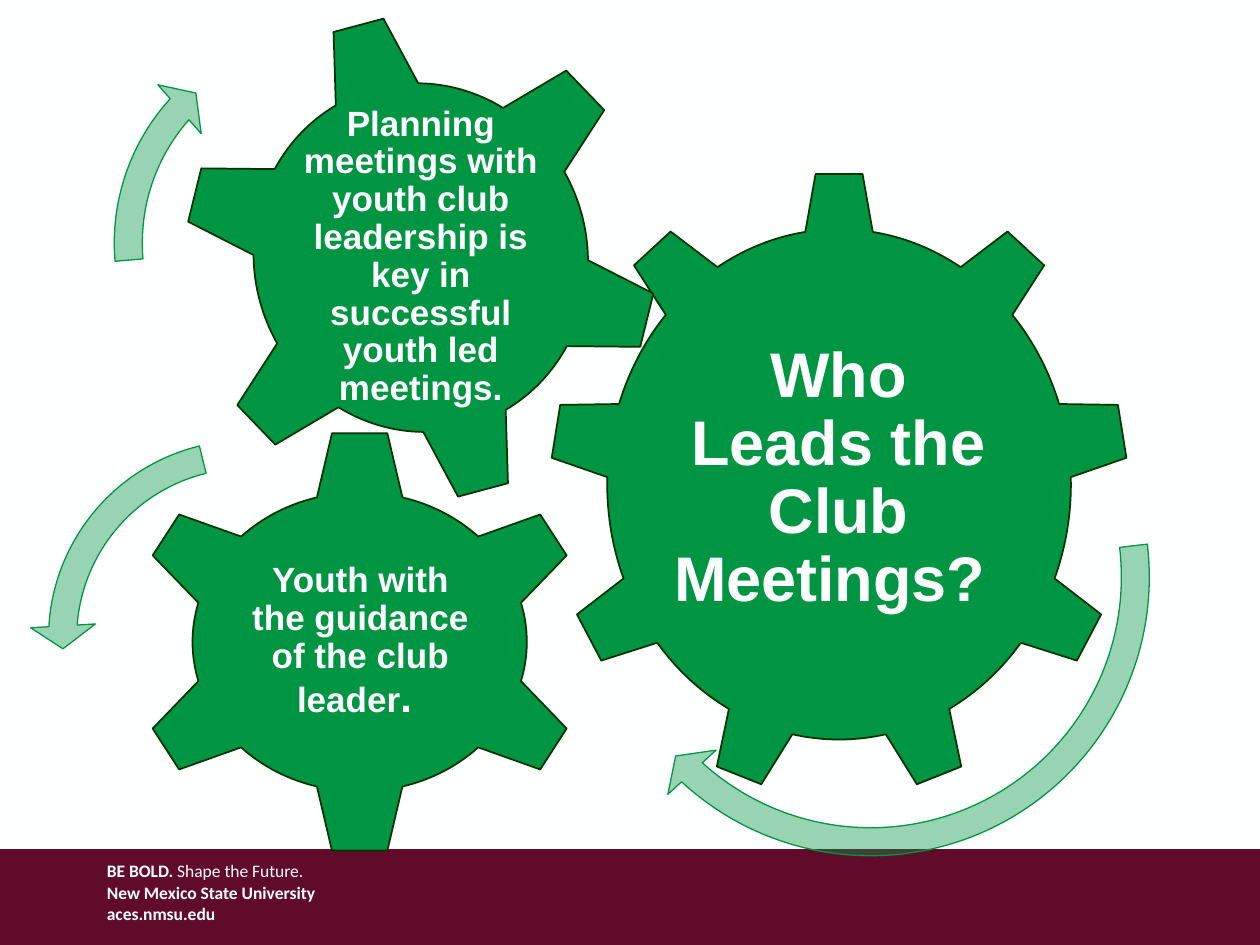
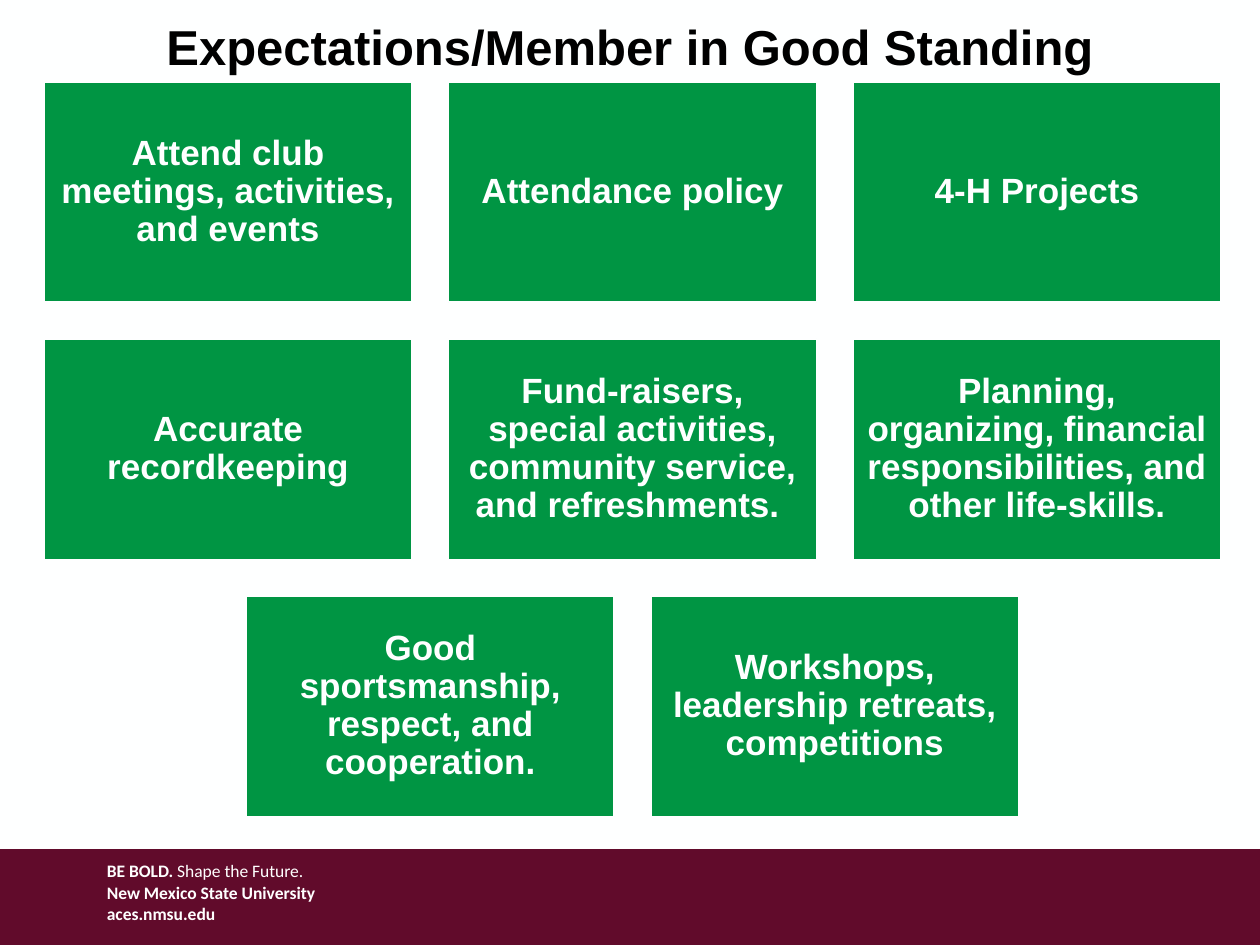
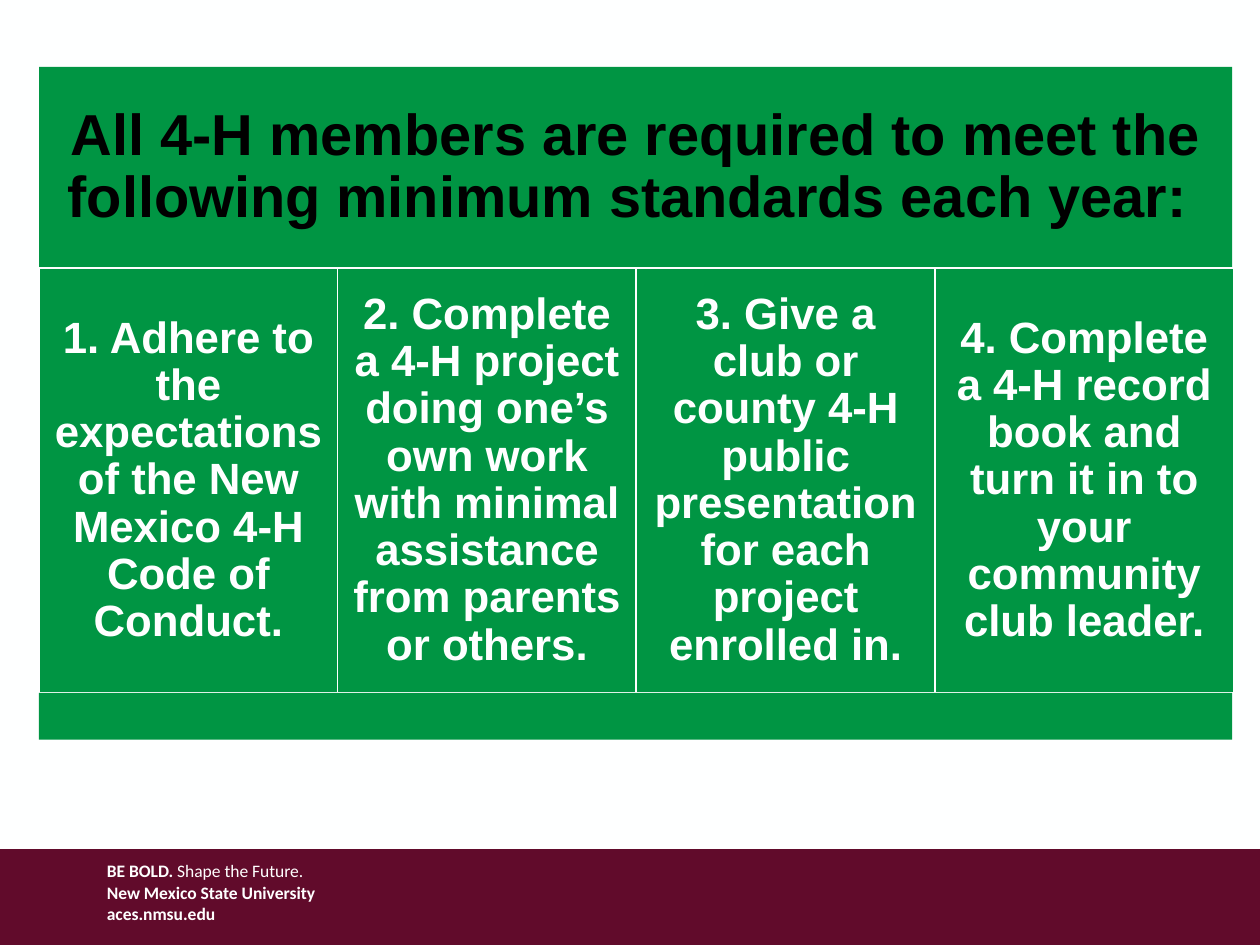
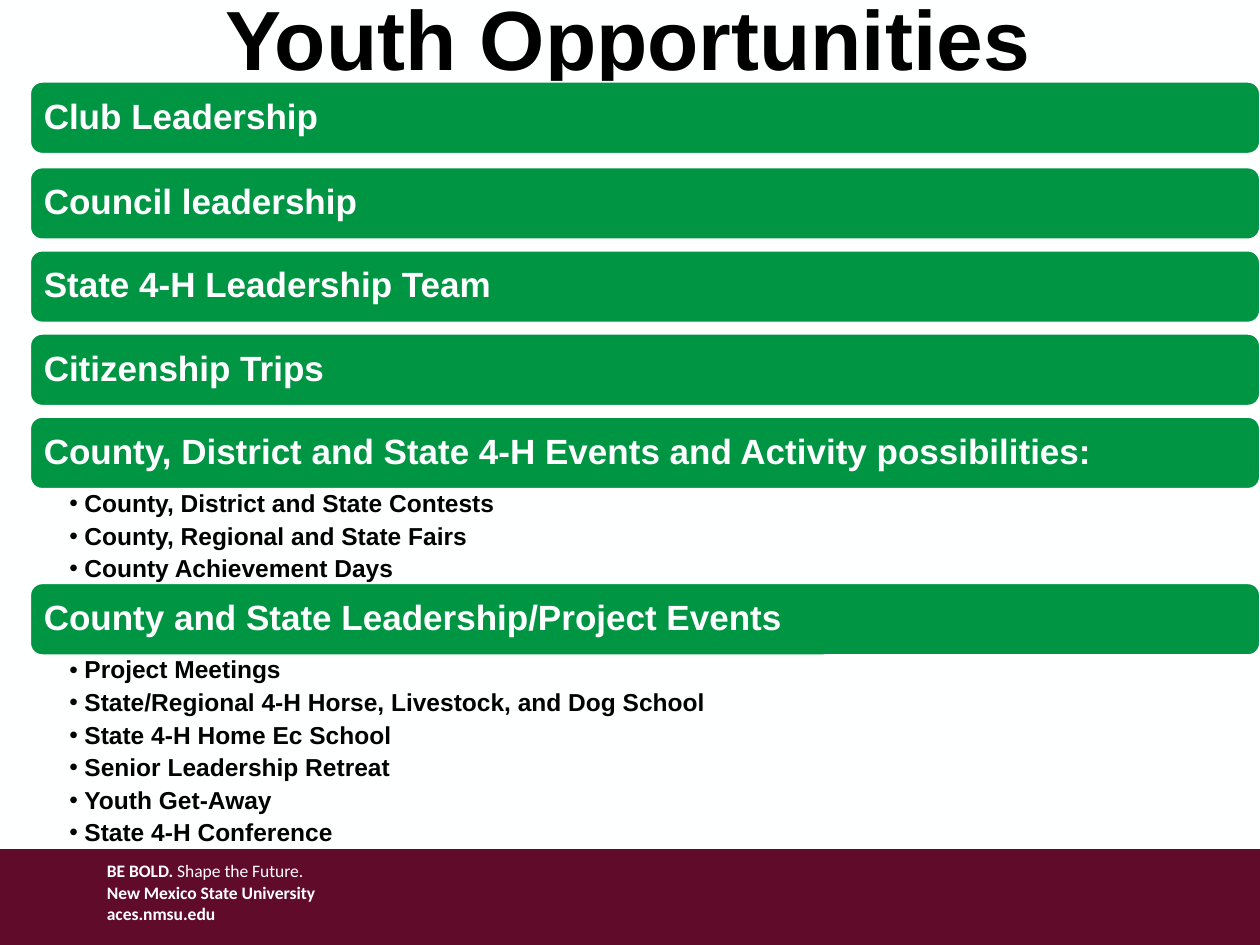
"""Build a four-slide deck on youth club leadership, expectations and opportunities."""
from dataclasses import dataclass

from lxml import etree
from pptx import Presentation
from pptx.dml.color import RGBColor
from pptx.enum.shapes import MSO_SHAPE as Shape
from pptx.enum.text import MSO_ANCHOR as Anchor, MSO_AUTO_SIZE as AutoSize, PP_ALIGN as Align
from pptx.oxml import parse_xml
from pptx.oxml.ns import nsdecls, qn
from pptx.util import Inches, Pt


@dataclass(frozen=True)
class Theme:
    green: RGBColor = RGBColor.from_string("009543")
    dark_green: RGBColor = RGBColor.from_string("003300")
    maroon: RGBColor = RGBColor.from_string("610B2B")
    paper: RGBColor = RGBColor.from_string("FEFFFF")
    white: RGBColor = RGBColor.from_string("FFFFFF")
    black: RGBColor = RGBColor.from_string("000000")
    font: str = "Arial"
    footer_font: str = "Calibri"
    banner: int = 48
    hub: int = 36
    heading: int = 33
    title: int = 28
    column: int = 25
    stop: int = 24
    label: int = 20
    bullet: int = 14
    footer: int = 10


theme = Theme()


def draw(page, kind, at, fill=theme.green, line=None, weight=1):
    """Add a flat preset shape."""
    shape = page.shapes.add_shape(kind, *map(Inches, at))
    shape.shadow.inherit = False
    shape.fill.solid()
    shape.fill.fore_color.rgb = fill
    if line is None:
        shape.line.fill.background()
    else:
        shape.line.color.rgb = line
        shape.line.width = Pt(weight)
    return shape


def write(box, parts, size, color=theme.paper, at=None, inset=0.08, align=Align.CENTER,
          anchor=Anchor.MIDDLE, outlined=True):
    """Fill a box with one bold paragraph made of (text, size) parts or a plain string."""
    if at:
        box.left, box.top, box.width, box.height = map(Inches, at)
    frame = box.text_frame
    frame.word_wrap = True
    frame.auto_size = AutoSize.NONE
    frame.vertical_anchor = anchor
    frame.margin_left = frame.margin_right = Inches(inset)
    frame.margin_top = frame.margin_bottom = Inches(inset)
    para = frame.paragraphs[0]
    para.alignment = align
    if outlined:
        para.line_spacing = 0.9
        para.space_after = Pt(size * 0.35)
    for text, points in [(parts, size)] if isinstance(parts, str) else parts:
        span = para.add_run()
        span.text = text
        span.font.name, span.font.size, span.font.bold = theme.font, Pt(points), True
        span.font.color.rgb = color
        if outlined:
            span.font._element.insert(0, parse_xml(
                f'<a:ln {nsdecls("a")} w="9525"><a:solidFill>'
                f'<a:srgbClr val="{theme.dark_green}"/></a:solidFill></a:ln>'))


deck = Presentation()
deck.slide_width, deck.slide_height = Inches(10), Inches(7.5)
master = deck.slide_master
master.background.fill.solid()
master.background.fill.fore_color.rgb = theme.paper
title_only, two_content = deck.slide_layouts[5], deck.slide_layouts[3]

page = deck.slides.add_slide(title_only)
band = draw(page, Shape.RECTANGLE, (0, 6.74, 10, 0.76), theme.maroon)
footer = page.shapes.add_textbox(*map(Inches, (0.75, 6.78, 2.88, 0.82)))
footer.text_frame.word_wrap = True
footer_lines = [
    [("BE BOLD. ", True), ("Shape the Future.", False)],
    [("New Mexico State University", True)],
    [("aces.nmsu.edu", True)],
]
for index, line in enumerate(footer_lines):
    para = footer.text_frame.add_paragraph() if index else footer.text_frame.paragraphs[0]
    for text, bold in line:
        span = para.add_run()
        span.text = text
        span.font.name, span.font.size, span.font.bold = theme.footer_font, Pt(theme.footer), bold
        span.font.color.rgb = theme.white
corner = draw(page, Shape.RECTANGLE, (0.13, 6.74, 0.7, 0.76), theme.maroon)
first_placeholder = master.shapes[0].element
for number, shared in enumerate((band, footer, corner), 20):
    shared.element.nvSpPr.cNvPr.set("id", str(number))
    first_placeholder.addprevious(shared.element)

gears = [
    (Shape.GEAR_9, (4.36, 1.36, 4.6, 4.97), 0, (5.28, 2.5, 2.75, 2.6), 0.05, theme.hub,
     "Who Leads the Club Meetings? "),
    (Shape.GEAR_6, (1.02, 3.4, 3.67, 3.39), 0, (1.92, 4.26, 1.88, 1.67), 0.03, theme.label,
     [("Youth with the guidance of the club leader", theme.label), (". ", theme.stop)]),
    (Shape.GEAR_6, (1.45, 0.09, 3.78, 3.91), 345, (2.27, 0.95, 2.14, 2.18), 0.03, theme.label,
     "Planning meetings with youth club leadership is key in successful youth led meetings."),
]
for kind, at, turn, text_at, inset, size, text in gears:
    gear = draw(page, kind, at, line=theme.dark_green)
    gear.rotation = turn
    is_hub = kind == Shape.GEAR_9
    box = page.shapes.title if is_hub else page.shapes.add_textbox(0, 0, 0, 0)
    write(box, text, size, at=text_at, inset=inset)
    gear.element.addnext(box.element)

arrows = [
    (Shape.CIRCULAR_ARROW, (4.55, 2.22, 4.72, 4.72), 90, (0.047, 2.99, 25.489, 157.925, 0.055)),
    (Shape.LEFT_CIRCULAR_ARROW, (0.24, 3.35, 3.43, 3.43), 9, (0.065, 4.3, 104.891, 148.378, 0.075)),
    (Shape.CIRCULAR_ARROW, (0.76, 0.08, 3.7, 3.7), 0, (0.06, 3.941, 133.138, 105.082, 0.07)),
]
for kind, at, turn, bends in arrows:
    arrow = draw(page, kind, at, line=theme.green, weight=0.75)
    arrow.rotation = turn
    for index, bend in enumerate(bends):
        arrow.adjustments[index] = bend
    fill_color = arrow.element.spPr.find(qn("a:solidFill"))[0]
    etree.SubElement(fill_color, qn("a:alpha")).set("val", "40000")

page = deck.slides.add_slide(title_only)
write(page.shapes.title, "Expectations/Member in Good Standing", theme.title, theme.black,
      at=(0, 0.08, 10, 0.57), inset=0.05, anchor=Anchor.TOP, outlined=False)
expectations = [
    ["Attend club meetings, activities, and events", "Attendance policy", "4-H Projects"],
    ["Accurate recordkeeping",
     "Fund-raisers, special activities, community service, and refreshments. ",
     "Planning, organizing, financial responsibilities, and other life-skills."],
    ["Good sportsmanship, respect, and cooperation.",
     "Workshops, leadership retreats, competitions"],
]
tile_width, tile_height, gap = 2.92, 1.75, 0.29
for row, texts in enumerate(expectations):
    indent = (3 - len(texts)) * (tile_width + gap) / 2
    for column, text in enumerate(texts):
        left = 0.35 + indent + column * (tile_width + gap)
        top = 0.65 + row * (tile_height + gap)
        tile = draw(page, Shape.RECTANGLE, (left, top, tile_width, tile_height), line=theme.paper)
        write(tile, text, theme.label)

page = deck.slides.add_slide(title_only)
heading = page.shapes.title
heading.fill.solid()
heading.fill.fore_color.rgb = theme.green
write(heading, "All 4-H members are required to meet the following minimum standards each year: ",
      theme.heading, theme.black, at=(0.31, 0.53, 9.47, 1.6), inset=0.14)
standards = [
    "1. Adhere to the expectations of the New Mexico 4-H Code of Conduct.",
    "2. Complete a 4-H project doing one’s own work with minimal assistance from parents or others.",
    "3. Give a club or county 4-H public presentation for each project enrolled in.",
    "4. Complete a 4-H record book and turn it in to your community club leader.",
]
column_width = 2.37
for index, text in enumerate(standards):
    column_at = (0.31 + index * column_width, 2.13, column_width, 3.37)
    write(draw(page, Shape.RECTANGLE, column_at, line=theme.paper), text, theme.column, inset=0.1)
draw(page, Shape.RECTANGLE, (0.31, 5.5, 9.47, 0.37))

page = deck.slides.add_slide(two_content)
write(page.shapes.title, "Youth Opportunities", theme.banner, theme.black,
      at=(-0.03, -0.16, 10.03, 0.91), inset=0.05, anchor=Anchor.TOP, outlined=False)
opportunities = [
    (0.65, "Club Leadership"),
    (1.33, "Council leadership"),
    (1.99, "State 4-H Leadership Team"),
    (2.65, "Citizenship Trips"),
    (3.31, "County, District and State 4-H Events and Activity possibilities:"),
    (4.63, "County and State Leadership/Project Events"),
]
for top, text in opportunities:
    bar = draw(page, Shape.ROUNDED_RECTANGLE, (0.24, top, 9.76, 0.57), line=theme.paper)
    write(bar, text, theme.label, align=Align.LEFT)

event_lists = [
    (3.88, 0.74, ["County, District and State Contests", "County, Regional and State Fairs",
                  "County Achievement Days"]),
    (5.2, 1.49, ["Project Meetings", "State/Regional 4-H Horse, Livestock, and Dog School",
                 "State 4-H Home Ec School", "Senior Leadership Retreat", "Youth Get-Away",
                 "State 4-H Conference"]),
]
for slot, (top, height, events) in enumerate(event_lists, 1):
    body = page.placeholders[slot]
    body.left, body.top, body.width, body.height = map(Inches, (0.24, top, 9.76, height))
    frame = body.text_frame
    frame.text = "\n".join(events)
    frame.word_wrap = True
    frame.auto_size = AutoSize.NONE
    frame.vertical_anchor = Anchor.TOP
    frame.margin_left, frame.margin_right = Inches(0.31), Inches(0.11)
    frame.margin_top = frame.margin_bottom = Inches(0.02)
    for para in frame.paragraphs:
        para.level = 1
        para.line_spacing = 0.9
        para.space_before, para.space_after = Pt(0), Pt(3.5)
        properties = para._p.get_or_add_pPr()
        properties.set("marL", str(Inches(0.12)))
        properties.set("indent", str(Inches(-0.12)))
        etree.SubElement(properties, qn("a:buChar")).set("char", "•")
        font = para.runs[0].font
        font.name, font.size, font.bold = theme.font, Pt(theme.bullet), True
        font.color.rgb = theme.black

deck.save("out.pptx")
